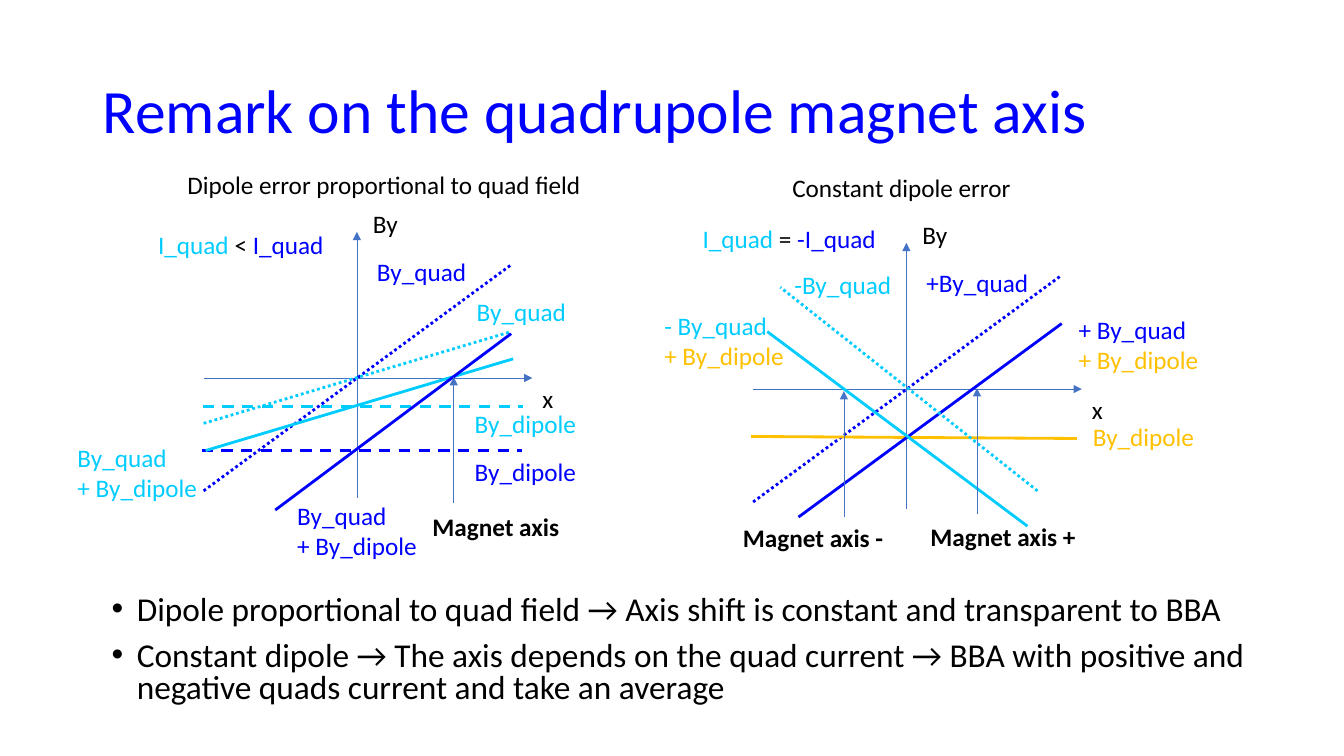
"""Build the slide on dipole errors and the quadrupole magnet axis."""
import pptx
import pptx.dml.color
import pptx.enum.dml
import pptx.enum.shapes
import pptx.enum.text
import pptx.oxml
import pptx.oxml.ns
import pptx.util

PX = 9144
FONT = "Calibri"
BLACK = pptx.dml.color.RGBColor(0x00, 0x00, 0x00)
BLUE = pptx.dml.color.RGBColor(0x00, 0x00, 0xFF)
CYAN = pptx.dml.color.RGBColor(0x00, 0xCC, 0xFF)
GOLD = pptx.dml.color.RGBColor(0xFF, 0xC0, 0x00)
AXIS = pptx.dml.color.RGBColor(0x44, 0x72, 0xC4)
DOTTED = pptx.enum.dml.MSO_LINE.ROUND_DOT
DASHED = pptx.enum.dml.MSO_LINE.DASH
TITLE = "Remark on the quadrupole magnet axis"
REMARKS = (
    "Dipole proportional to quad field → Axis shift is constant and transparent to BBA",
    "Constant dipole → The axis depends on the quad current → BBA with positive and "
    "negative quads current and take an average",
)


def px(*lengths):
    """Turn pixel lengths into EMU."""
    return [pptx.util.Emu(length * PX) for length in lengths]


def write_run(paragraph, text, size=18, color=BLACK, bold=False):
    """Append one formatted run to a paragraph."""
    run = paragraph.add_run()
    run.text = text
    run.font.name = FONT
    run.font.size = pptx.util.Pt(size)
    run.font.color.rgb = color
    run.font.bold = bold


def add_label(slide, box, *lines, wrap=False, bold=False):
    """Add a text box whose lines are lists of (text, color) runs."""
    shape = slide.shapes.add_textbox(*px(*box))
    frame = shape.text_frame
    frame.word_wrap = wrap
    frame.auto_size = pptx.enum.text.MSO_AUTO_SIZE.SHAPE_TO_FIT_TEXT
    for index, runs in enumerate(lines):
        paragraph = frame.add_paragraph() if index else frame.paragraphs[0]
        for text, color in runs:
            write_run(paragraph, text, color=color, bold=bold)


def add_line(slide, start, end, color, width=2, dash=None):
    """Add a straight line without shadow and return it."""
    connector = slide.shapes.add_connector(
        pptx.enum.shapes.MSO_CONNECTOR.STRAIGHT, *px(*start, *end))
    connector.line.color.rgb = color
    connector.line.width = pptx.util.Pt(width)
    if dash:
        connector.line.dash_style = dash
    properties = connector._element.spPr
    properties.append(pptx.oxml.parse_xml(
        f"<a:effectLst {pptx.oxml.ns.nsdecls('a')}/>"))
    return connector


def add_arrow(slide, start, end):
    """Add a thin line with a triangle at its end."""
    connector = add_line(slide, start, end, AXIS, width=0.5)
    connector.line._get_or_add_ln().append(pptx.oxml.parse_xml(
        f"<a:tailEnd {pptx.oxml.ns.nsdecls('a')} type='triangle'/>"))


def add_axes(slide, x, y):
    """Draw both axes, their names and the blue quadrupole field."""
    add_arrow(slide, (x, y), (x + 326, y))
    add_arrow(slide, (x + 152, y + 119), (x + 152, y - 145))
    add_line(slide, (x, y + 112), (x + 306, y - 113), BLUE, dash=DOTTED)
    add_label(slide, (x + 326, y, 31, 40), [("x", BLACK)])
    add_label(slide, (x + 158, y - 173, 45, 40), [("By", BLACK)])


def add_proportional_plot(slide):
    """Draw the plot of a dipole error that follows the quadrupole field."""
    add_axes(slide, 202, 375)
    add_line(slide, (202, 420), (507, 329), CYAN, dash=DOTTED)
    add_line(slide, (201, 403), (519, 403), CYAN, dash=DASHED)
    add_line(slide, (200, 447), (518, 447), BLUE, dash=DASHED)
    add_line(slide, (204, 447), (509, 356), CYAN)
    add_line(slide, (273, 506), (507, 331), BLUE)
    add_arrow(slide, (450, 499), (450, 374))
    add_label(slide, (176, 163, 427, 40),
              [("Dipole error proportional to quad field", BLACK)], wrap=True)
    add_label(slide, (147, 223, 186, 40),
              [("I_quad ", CYAN), ("< ", BLACK), ("I_quad", BLUE)])
    for left, top, color in ((364, 249, BLUE), (463, 289, CYAN)):
        add_label(slide, (left, top, 110, 40), [("By_quad", color)])
    for top, color in ((448, BLUE), (400, CYAN)):
        add_label(slide, (461, top, 122, 40), [("By_dipole", color)])
    for left, top, color in ((285, 491, BLUE), (67, 434, CYAN)):
        add_label(slide, (left, top, 140, 71),
                  [("By_quad", color)], [("+ By_dipole", color)])
    add_label(slide, (419, 502, 147, 40), [("Magnet axis", BLACK)], bold=True)


def add_constant_plot(slide):
    """Draw the plot of a constant dipole error."""
    add_axes(slide, 747, 386)
    add_line(slide, (745, 433), (1068, 435), GOLD)
    add_line(slide, (792, 513), (1053, 321), BLUE)
    add_line(slide, (1019, 522), (761, 329), CYAN)
    add_line(slide, (1029, 487), (774, 285), CYAN, dash=DOTTED)
    add_arrow(slide, (837, 513), (837, 388))
    add_arrow(slide, (969, 510), (969, 385))
    add_label(slide, (776, 166, 427, 40),
              [("Constant dipole error", BLACK)], wrap=True)
    add_label(slide, (687, 217, 194, 40),
              [("I_quad ", CYAN), ("= ", BLACK), ("-I_quad", BLUE)])
    add_label(slide, (909, 260, 122, 40), [("+By_quad", BLUE)])
    add_label(slide, (778, 262, 117, 40), [("-By_quad", CYAN)])
    add_label(slide, (1074, 413, 122, 40), [("By_dipole", GOLD)])
    for left, top, sign, color in ((1060, 307, "+", BLUE), (649, 303, "-", CYAN)):
        add_label(slide, (left, top, 140, 71),
                  [(f"{sign} By_quad", color)], [("+ By_dipole", GOLD)])
    add_label(slide, (913, 512, 165, 40), [("Magnet axis +", BLACK)], bold=True)
    add_label(slide, (727, 513, 161, 40), [("Magnet axis -", BLACK)], bold=True)


def add_title(slide):
    """Place and fill the title placeholder."""
    title = slide.shapes.title
    title.left, title.top, title.width, title.height = px(92, 40, 1150, 145)
    title.text_frame.vertical_anchor = pptx.enum.text.MSO_ANCHOR.MIDDLE
    paragraph = title.text_frame.paragraphs[0]
    paragraph.alignment = pptx.enum.text.PP_ALIGN.LEFT
    paragraph.line_spacing = 0.9
    write_run(paragraph, TITLE, size=44, color=BLUE)


def add_remarks(slide):
    """Add the bulleted remarks below the plots."""
    frame = slide.shapes.add_textbox(*px(101, 586, 1173, 127)).text_frame
    frame.word_wrap = True
    for index, text in enumerate(REMARKS):
        paragraph = frame.add_paragraph() if index else frame.paragraphs[0]
        properties = paragraph._p.get_or_add_pPr()
        properties.set("marL", str(25 * PX))
        properties.set("indent", str(-25 * PX))
        for tag in ("<a:buFont {} typeface='Arial'/>", "<a:buChar {} char='•'/>"):
            properties.append(pptx.oxml.parse_xml(
                tag.format(pptx.oxml.ns.nsdecls("a"))))
        paragraph.line_spacing = 0.8
        paragraph.space_before = pptx.util.Pt(10 if index else 0)
        write_run(paragraph, text, size=23.8)


def main():
    """Build and save the presentation."""
    presentation = pptx.Presentation()
    presentation.slide_width, presentation.slide_height = px(1333, 750)
    slide = presentation.slides.add_slide(presentation.slide_layouts[5])
    add_title(slide)
    add_proportional_plot(slide)
    add_constant_plot(slide)
    add_remarks(slide)
    presentation.save("out.pptx")


if __name__ == "__main__":
    main()
